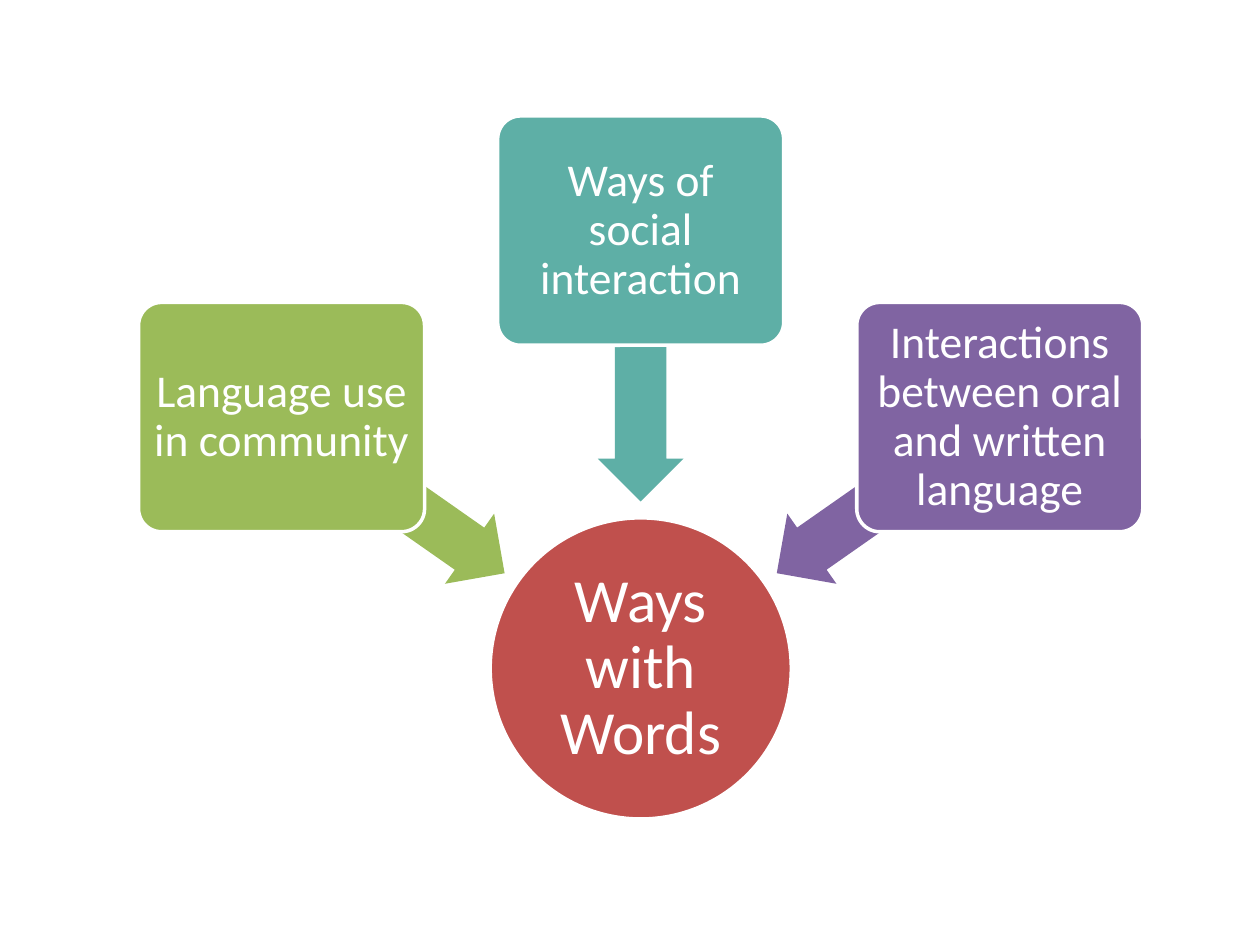
from pptx import Presentation
from pptx.dml.color import RGBColor
from pptx.enum.shapes import MSO_SHAPE
from pptx.enum.text import MSO_ANCHOR, PP_ALIGN
from pptx.util import Inches, Pt

WHITE = RGBColor(0xFF, 0xFF, 0xFF)
RED = RGBColor(0xC0, 0x50, 0x4D)
GREEN = RGBColor(0x9B, 0xBB, 0x59)
TEAL = RGBColor(0x5E, 0xAF, 0xA6)
PURPLE = RGBColor(0x80, 0x64, 0xA2)

CENTER_X = 5.085
HUB_TOP, HUB_SIZE = 4.11, 2.39
BOX_WIDTH, BOX_HEIGHT = 2.27, 1.82
BOX_STEP = 2.85
ARROW_LENGTH, ARROW_HEIGHT = 2.16, 0.68

prs = Presentation()
prs.slide_width, prs.slide_height = Inches(10), Inches(7.5)
slide = prs.slides.add_slide(prs.slide_layouts[6])


def add_filled(preset, center_x, top, width, height, color):
    shape = slide.shapes.add_shape(
        preset, Inches(center_x - width / 2), Inches(top), Inches(width), Inches(height))
    shape.shadow.inherit = False
    shape.fill.solid()
    shape.fill.fore_color.rgb = color
    shape.line.fill.background()
    return shape


def add_label(shape, text, size, inset):
    """Write white centred text in a shape and give it a white outline."""
    shape.line.color.rgb = WHITE
    shape.line.width = Pt(2)
    frame = shape.text_frame
    frame.word_wrap = True
    frame.vertical_anchor = MSO_ANCHOR.MIDDLE
    for side in ("left", "top", "right", "bottom"):
        setattr(frame, f"margin_{side}", Inches(inset))
    paragraph = frame.paragraphs[0]
    paragraph.alignment = PP_ALIGN.CENTER
    paragraph.line_spacing = 0.9
    run = paragraph.add_run()
    run.text = text
    run.font.name = "Calibri"
    run.font.size = Pt(size)
    run.font.color.rgb = WHITE


hub = add_filled(MSO_SHAPE.OVAL, CENTER_X, HUB_TOP, HUB_SIZE, HUB_SIZE, RED)
add_label(hub, "Ways with Words", 35, 0.02)

# text, colour, column from the centre, box top, arrow offset, arrow top, arrow rotation
themes = [
    ("Language use in community", GREEN, -1, 2.4, -1.965, 3.59, 215),
    ("Ways of social interaction", TEAL, 0, 0.92, 0, 2.56, 270),
    ("Interactions between oral and written language", PURPLE, 1, 2.4, 1.965, 3.59, 325),
]
for text, color, column, box_top, arrow_offset, arrow_top, rotation in themes:
    arrow = add_filled(MSO_SHAPE.LEFT_ARROW, CENTER_X + arrow_offset, arrow_top,
                       ARROW_LENGTH, ARROW_HEIGHT, color)
    arrow.adjustments[0] = 0.6
    arrow.adjustments[1] = 0.5
    arrow.rotation = rotation

    box = add_filled(MSO_SHAPE.ROUNDED_RECTANGLE, CENTER_X + column * BOX_STEP, box_top,
                     BOX_WIDTH, BOX_HEIGHT, color)
    box.adjustments[0] = 0.1
    add_label(box, text, 26, 0.05)

prs.save("out.pptx")
